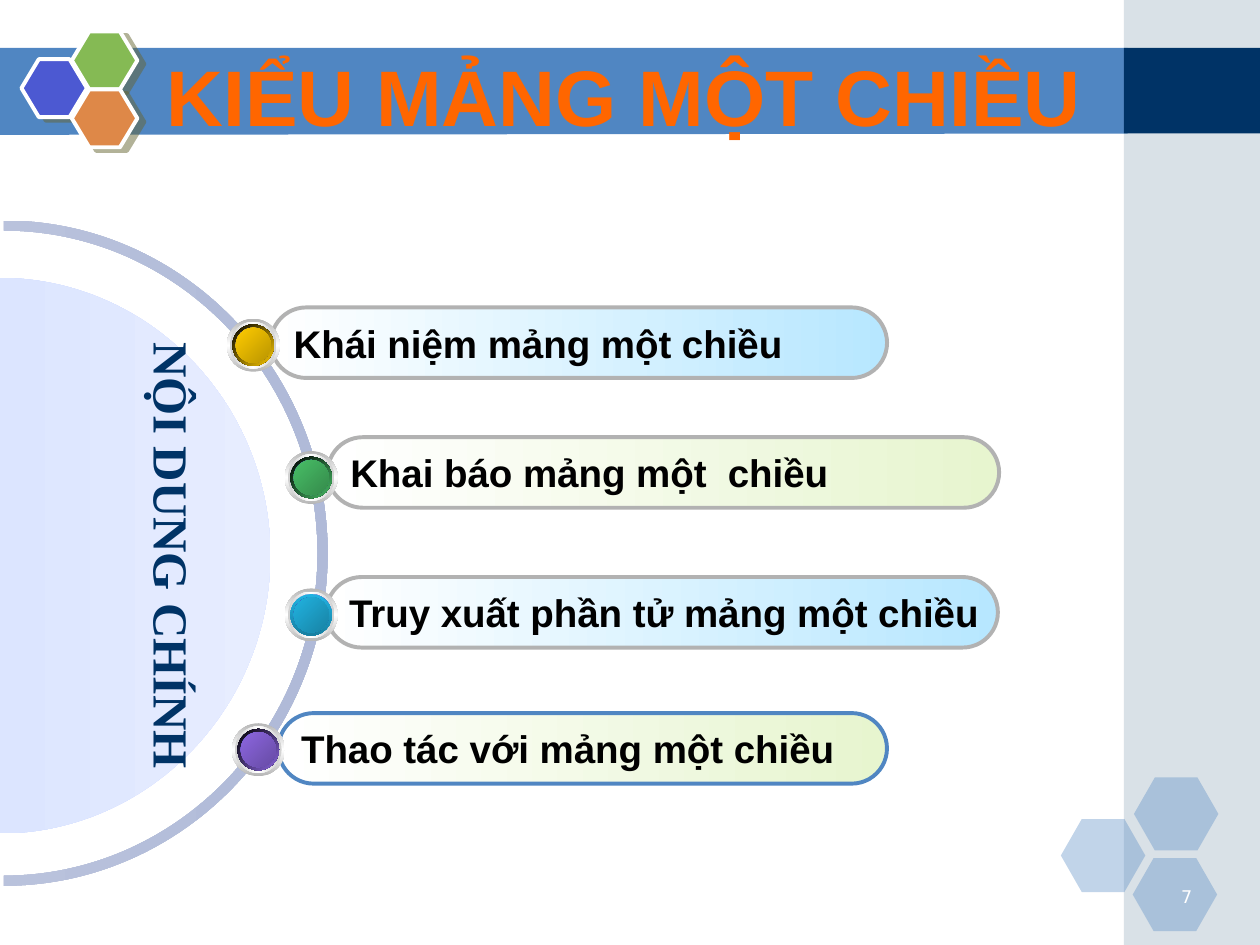
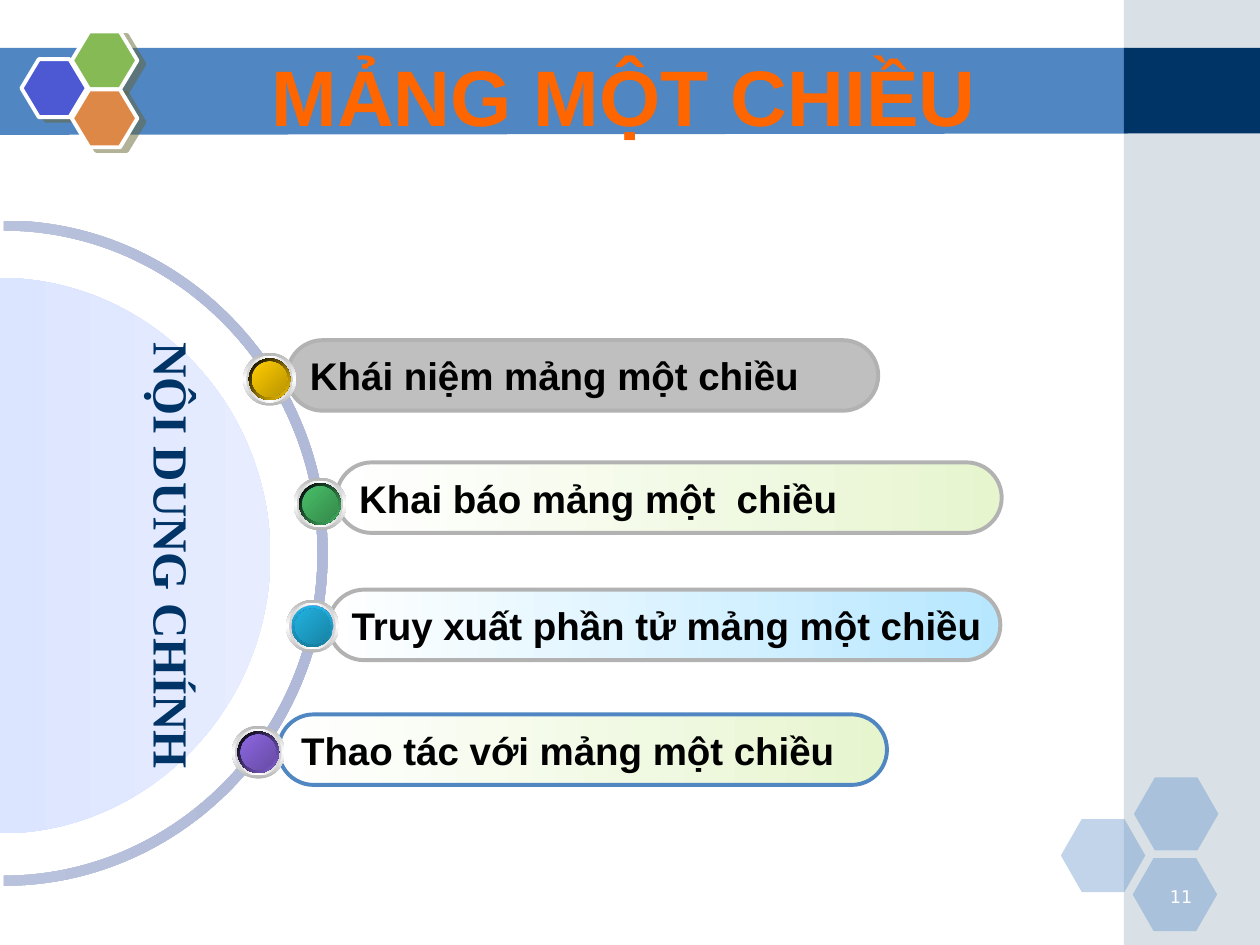
from dataclasses import dataclass

from lxml.etree import SubElement
from pptx import Presentation
from pptx.dml.color import RGBColor
from pptx.enum.shapes import MSO_SHAPE
from pptx.enum.text import MSO_ANCHOR, PP_ALIGN
from pptx.oxml import parse_xml
from pptx.oxml.ns import nsdecls, qn
from pptx.shapes.autoshape import Shape
from pptx.slide import Slide
from pptx.text.text import TextFrame
from pptx.util import Inches, Pt

COLORS = {
    "band": "5086C2",
    "navy": "003366",
    "side": "A0B5C4",
    "white": "FFFFFF",
    "black": "000000",
    "title": "FF6600",
    "logo_blue": "4C59D2",
    "logo_blue_dark": "3A44A1",
    "logo_green": "85BA54",
    "logo_orange": "DE8848",
    "logo_shadow": "666633",
    "arc_start": "C4CBE1",
    "arc_end": "B0BAD8",
    "disc_start": "CFDCFF",
    "disc_end": "E7EDFF",
    "bar_blue": "B7E7FF",
    "bar_green": "E7F5CF",
    "bar_gray": "BFBFBF",
    "outline": "B2B2B2",
    "metal": "B6B6B6",
    "metal_light": "D1D1D1",
    "yellow": "FFCC00",
    "yellow_dark": "BA9500",
    "green": "48BE67",
    "green_dark": "358B4B",
    "cyan": "21B3E1",
    "cyan_rim": "1880A1",
    "cyan_dark": "1883A4",
    "purple": "8D67E1",
    "purple_dark": "674BA4",
}
ARC_CONTROL = 0.55

Point = tuple[float, float]


@dataclass(frozen=True)
class Box:
    left: float
    top: float
    width: float
    height: float


@dataclass(frozen=True)
class Gradient:
    colors: tuple[str, ...]
    angle: int = 0


@dataclass(frozen=True)
class Hexagon:
    box: Box
    color: str


@dataclass(frozen=True)
class Topic:
    text: str
    bar_color: str
    outline: str
    rim: Gradient
    core: Gradient


@dataclass(frozen=True)
class Placement:
    left: float
    top: float
    width: float
    orb_left: float
    orb_top: float


@dataclass(frozen=True)
class Agenda:
    title: str
    number: str
    placements: tuple[Placement, ...]
    current: int | None = None


CORNER_HEXAGONS = [
    Hexagon(Box(left, top, 0.67, 0.58), "band")
    for left, top in ((8.42, 6.5), (9, 6.17), (8.99, 6.81))
]
EMBLEM_HEXAGONS = [
    Hexagon(Box(left, top, 0.52, 0.46), color)
    for left, top, color in (
        (0.17, 0.47, "logo_blue"),
        (0.57, 0.25, "logo_green"),
        (0.57, 0.71, "logo_orange"),
    )
]

TOPICS = (
    Topic("Khái niệm mảng một chiều", "bar_blue", "outline",
          Gradient(("black", "yellow"), 45), Gradient(("yellow", "yellow_dark"), 45)),
    Topic("Khai báo mảng một  chiều", "bar_green", "outline",
          Gradient(("black", "green"), 45), Gradient(("green", "green_dark"), 45)),
    Topic("Truy xuất phần tử mảng một chiều", "bar_blue", "outline",
          Gradient(("cyan", "cyan_rim"), 90), Gradient(("cyan", "cyan_dark"), 45)),
    Topic("Thao tác với mảng một chiều", "bar_green", "band",
          Gradient(("black", "purple"), 45), Gradient(("purple", "purple_dark"), 45)),
)

AGENDAS = (
    Agenda("KIỂU MẢNG MỘT CHIỀU", "7", (
        Placement(2.15, 2.44, 4.89, 1.8, 2.53),
        Placement(2.6, 3.47, 5.33, 2.26, 3.58),
        Placement(2.59, 4.58, 5.33, 2.26, 4.67),
        Placement(2.21, 5.66, 4.83, 1.84, 5.74),
    )),
    Agenda("MẢNG MỘT CHIỀU", "11", (
        Placement(2.28, 2.7, 4.69, 1.93, 2.8),
        Placement(2.67, 3.67, 5.28, 2.33, 3.79),
        Placement(2.61, 4.68, 5.33, 2.27, 4.76),
        Placement(2.21, 5.67, 4.83, 1.84, 5.76),
    ), current=0),
)


def rgb(color: str) -> RGBColor:
    return RGBColor.from_string(COLORS[color])


def fill_shape(shape: Shape, fill: str | Gradient, opacity: int = 100) -> None:
    properties = shape.element.spPr
    if isinstance(fill, Gradient):
        last = len(fill.colors) - 1
        stops = "".join(
            f'<a:gs pos="{index * 100000 // last}"><a:srgbClr val="{COLORS[color]}"/></a:gs>'
            for index, color in enumerate(fill.colors)
        )
        shape.fill.background()
        properties.replace(properties.find(qn("a:noFill")), parse_xml(
            f'<a:gradFill {nsdecls("a")} rotWithShape="1"><a:gsLst>{stops}</a:gsLst>'
            f'<a:lin ang="{fill.angle * 60000}" scaled="0"/></a:gradFill>'
        ))
        return
    shape.fill.solid()
    shape.fill.fore_color.rgb = rgb(fill)
    if opacity < 100:
        color_element = properties.find(qn("a:solidFill")).find(qn("a:srgbClr"))
        SubElement(color_element, qn("a:alpha"), val=str(opacity * 1000))


def style_shape(shape: Shape, fill: str | Gradient, line: str | None = None,
                opacity: int = 100) -> Shape:
    shape.shadow.inherit = False
    fill_shape(shape, fill, opacity)
    if line is None:
        shape.line.fill.background()
    else:
        shape.line.color.rgb = rgb(line)
        shape.line.width = Pt(2.25)
    return shape


def add_preset(slide: Slide, kind: MSO_SHAPE, box: Box, fill: str | Gradient,
               line: str | None = None, opacity: int = 100) -> Shape:
    shape = slide.shapes.add_shape(
        kind, Inches(box.left), Inches(box.top), Inches(box.width), Inches(box.height))
    return style_shape(shape, fill, line, opacity)


def add_outline(slide: Slide, points: list[Point], fill: str | Gradient,
                left: float = 0, top: float = 0) -> Shape:
    corners = [(Inches(x), Inches(y)) for x, y in points]
    builder = slide.shapes.build_freeform(*corners[0])
    builder.add_line_segments(corners[1:], close=True)
    return style_shape(builder.convert_to_shape(Inches(left), Inches(top)), fill)


def add_half_circle(slide: Slide, box: Box, points: list[Point], fill: Gradient) -> Shape:
    shape = add_outline(slide, points, fill, box.left, box.top)
    shape.height = Inches(box.height)
    outline = next(shape.element.iter(qn("a:path")))
    outline.set("h", str(shape.height))
    vertices = [(int(point.get("x")), int(point.get("y"))) for point in outline.iter(qn("a:pt"))]
    segments = outline.findall(qn("a:lnTo"))
    for segment, (x1, y1), (x2, y2) in zip(segments, vertices, vertices[1:]):
        if y1 == y2:
            continue
        shift_x, shift_y = int(ARC_CONTROL * (x2 - x1)), int(ARC_CONTROL * (y2 - y1))
        if y2 < y1:
            controls = (x1, y1 + shift_y), (x2 - shift_x, y2)
        else:
            controls = (x1 + shift_x, y1), (x2, y2 - shift_y)
        if x2 < x1 and y2 < y1:
            controls = (x1, y1 + shift_y), (x2 - shift_x, y2)
        curve = "".join(f'<a:pt x="{x}" y="{y}"/>' for x, y in (*controls, (x2, y2)))
        outline.replace(segment, parse_xml(
            f'<a:cubicBezTo {nsdecls("a")}>{curve}</a:cubicBezTo>'))
    shape.rotation = 90
    return shape


def write(text_frame: TextFrame, text: str, size: float, font_name: str, color: str,
          alignment: PP_ALIGN = PP_ALIGN.LEFT, bold: bool = True) -> None:
    text_frame.text = text
    paragraph = text_frame.paragraphs[0]
    paragraph.alignment = alignment
    font = paragraph.runs[0].font
    font.size = Pt(size)
    font.name = font_name
    font.bold = bold
    font.color.rgb = rgb(color)


def add_text_box(slide: Slide, box: Box) -> Shape:
    text_box = slide.shapes.add_textbox(
        Inches(box.left), Inches(box.top), Inches(box.width), Inches(box.height))
    text_box.text_frame.word_wrap = True
    return text_box


def add_hexagon(slide: Slide, hexagon: Hexagon, adjustment: float,
                line: str | None = None, opacity: int = 100) -> Shape:
    shape = add_preset(slide, MSO_SHAPE.HEXAGON, hexagon.box, hexagon.color, line, opacity)
    shape.adjustments[0] = adjustment
    return shape


def draw_frame(slide: Slide) -> None:
    add_outline(slide, [(-0.01, 0.38), (8.95, 0.38), (8.95, 1.06), (-0.01, 1.07)], "band")
    add_preset(slide, MSO_SHAPE.RECTANGLE, Box(8.92, 0, 1.08, 7.5), "side", opacity=40)
    add_preset(slide, MSO_SHAPE.RECTANGLE, Box(8.92, 0.38, 1.08, 0.68), "navy")
    for hexagon in CORNER_HEXAGONS:
        add_hexagon(slide, hexagon, 0.286, opacity=35)
    for hexagon in EMBLEM_HEXAGONS:
        shape = add_hexagon(slide, hexagon, 0.3, line="white")
        shape.element.spPr.find(qn("a:effectLst")).append(parse_xml(
            f'<a:outerShdw {nsdecls("a")} blurRad="0" dist="{Pt(4.5)}" dir="{27 * 60000}">'
            f'<a:srgbClr val="{COLORS["logo_shadow"]}"><a:alpha val="50000"/></a:srgbClr>'
            '</a:outerShdw>'
        ))


def draw_half_circles(slide: Slide) -> None:
    add_half_circle(
        slide, Box(-2.65, 1.78, 5.28, 5.22),
        [(0, 2.57), (2.64, 0), (5.28, 2.57), (5.2, 2.57), (2.64, 0.08), (0.08, 2.57)],
        Gradient(("arc_start", "arc_end"), 270))
    disc = add_half_circle(
        slide, Box(-2.21, 2.26, 4.41, 4.3), [(0, 2.15), (2.2, 0), (4.41, 2.15)],
        Gradient(("disc_start", "disc_end"), 270))
    label = disc.text_frame
    label.word_wrap = False
    label.vertical_anchor = MSO_ANCHOR.MIDDLE
    label.margin_top = 0
    label.margin_bottom = Inches(2.76)
    write(label, "NỘI DUNG CHÍNH", 28, "Times New Roman", "navy", PP_ALIGN.CENTER)


def draw_bar(slide: Slide, topic: Topic, placement: Placement, is_current: bool) -> None:
    fill = "bar_gray" if is_current else Gradient(("white", topic.bar_color))
    bar = add_preset(slide, MSO_SHAPE.ROUNDED_RECTANGLE,
                     Box(placement.left, placement.top, placement.width, 0.56),
                     fill, topic.outline)
    bar.adjustments[0] = 0.5
    bar.text_frame.word_wrap = False
    bar.text_frame.vertical_anchor = MSO_ANCHOR.MIDDLE
    write(bar.text_frame, topic.text, 22, "Arial", "black")


def draw_orb(slide: Slide, topic: Topic, placement: Placement) -> None:
    size = 0.42
    layers = (
        (size, Gradient(("metal", "white", "metal"), 90)),
        (0.37, Gradient(("metal_light", "white", "metal_light"))),
        (0.33, Gradient(("white", "logo_blue", "white"), 45)),
        (0.33, topic.rim),
        (0.28, Gradient(("logo_blue_dark", "logo_blue", "logo_blue_dark"), 315)),
        (0.28, topic.core),
    )
    for diameter, gradient in layers:
        inset = (size - diameter) / 2
        add_preset(slide, MSO_SHAPE.OVAL, Box(
            placement.orb_left + inset, placement.orb_top + inset, diameter, diameter), gradient)


def draw_agenda(slide: Slide, agenda: Agenda) -> None:
    draw_frame(slide)
    draw_half_circles(slide)
    rows = list(zip(TOPICS, agenda.placements))
    for index, (topic, placement) in reversed(list(enumerate(rows))):
        draw_bar(slide, topic, placement, index == agenda.current)
    for topic, placement in rows:
        draw_orb(slide, topic, placement)
    number = add_text_box(slide, Box(9.06, 6.98, 0.5, 0.25))
    write(number.text_frame, agenda.number, 10, "DejaVu Sans", "white", PP_ALIGN.RIGHT, False)
    title = add_text_box(slide, Box(-0.05, 0.33, 10, 0.83))
    write(title.text_frame, agenda.title, 45, "Arial", "title", PP_ALIGN.CENTER)


def main() -> None:
    presentation = Presentation()
    presentation.slide_width = Inches(10)
    presentation.slide_height = Inches(7.5)
    for agenda in AGENDAS:
        draw_agenda(presentation.slides.add_slide(presentation.slide_layouts[6]), agenda)
    presentation.save("out.pptx")


if __name__ == "__main__":
    main()
